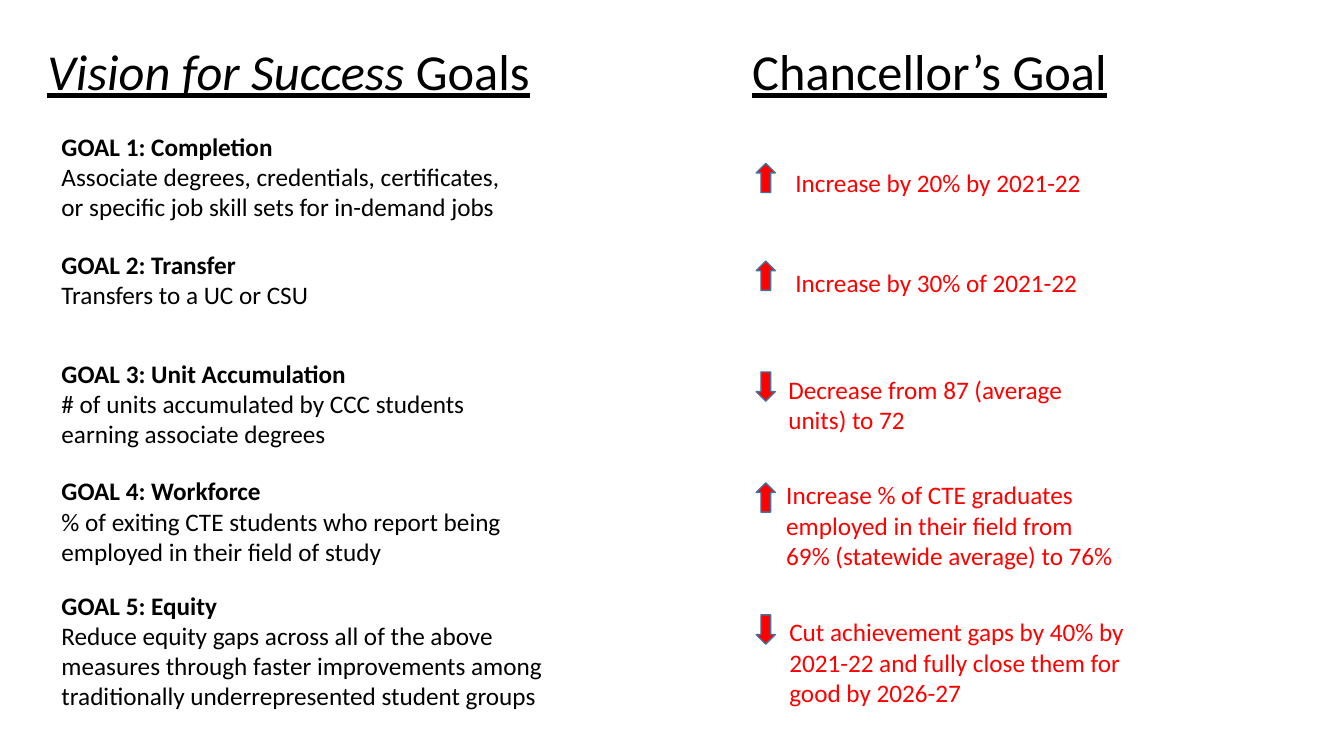
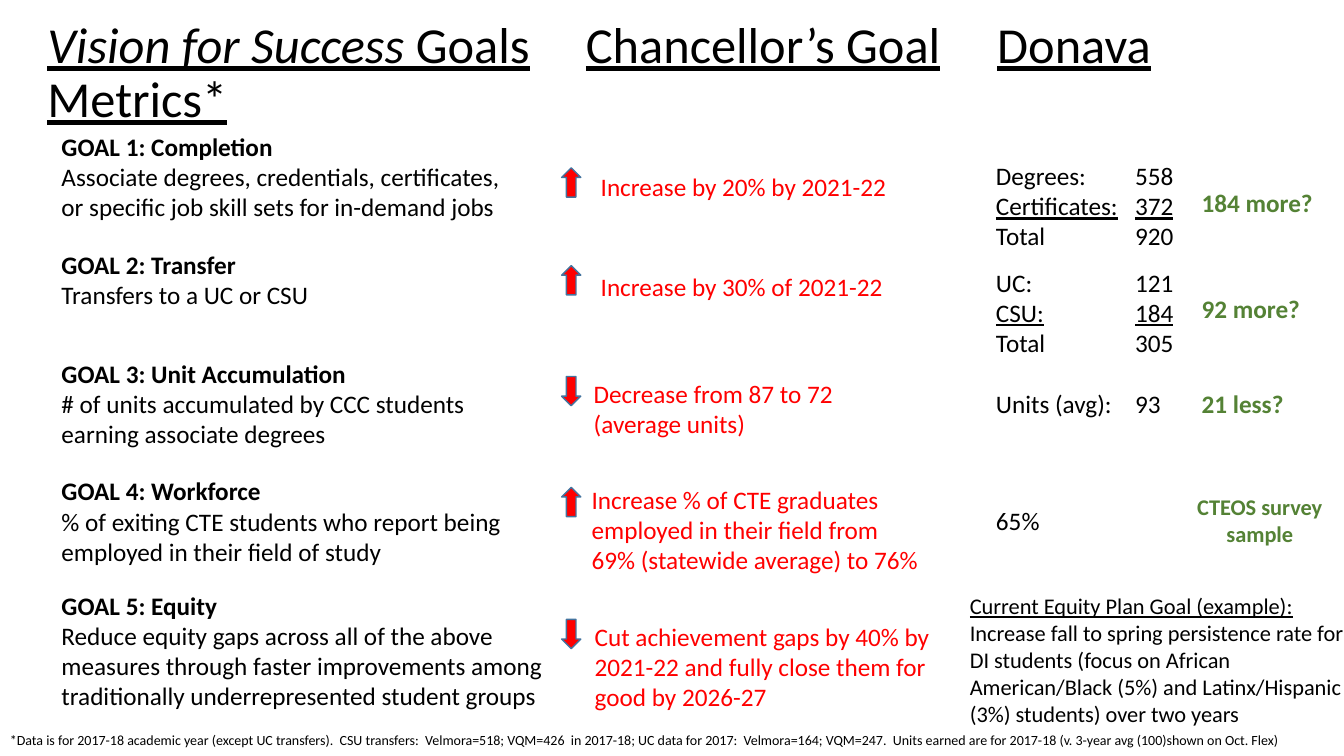
from pptx import Presentation
from pptx import util as u
from pptx.dml.color import RGBColor
from pptx.enum import shapes, text
from pptx.oxml.ns import qn
from lxml import etree

# Shared style: the grid has ten columns and ten rows to the inch
CELL = 0.1
FONT = "Calibri"
BLACK, RED, GREEN, EDGE = "000000", "FF0000", "548235", "43739E"
UP, DOWN = shapes.MSO_SHAPE.UP_ARROW, shapes.MSO_SHAPE.DOWN_ARROW

# Heading, detail and space before (points) of each goal
GOALS = [
    ("GOAL 1: Completion",
     "Associate degrees, credentials, certificates,\vor specific job skill sets for in-demand jobs", 0),
    ("GOAL 2: Transfer", "Transfers to a UC or CSU", 19.7),
    ("GOAL 3: Unit Accumulation",
     "# of units accumulated by CCC students\vearning associate degrees", 34.5),
    ("GOAL 4: Workforce",
     "% of exiting CTE students who report being\vemployed in their field of study", 19.1),
    ("GOAL 5: Equity",
     "Reduce equity gaps across all of the above measures through faster "
     "improvements among traditionally underrepresented student groups", 16.9),
]

# Arrow, arrow row, text row, text indent and text width of each target
TARGETS = [
    (UP, 16.2, 16.1, 2.9, 32, "Increase by 20% by 2021-22"),
    (UP, 25.9, 26, 2.9, 32, "Increase by 30% of 2021-22"),
    (DOWN, 36.9, 36.6, 2.2, 30.9, None),
    (UP, 47.9, 47.1, 2, 34.6,
     "Increase % of CTE graduates employed in their field from 69% (statewide average) to 76%"),
    (DOWN, 61, 60.7, 2.3, 35.9,
     "Cut achievement gaps by 40% by 2021-22 and fully close them for good by 2026-27"),
]

# Row, then label and value pairs; the line above a total is underlined
COUNTS = [
    (15.4, [("Degrees:", "558"), ("Certificates:", "372"), ("Total", "920")]),
    (26, [("UC:", "121"), ("CSU:", "184"), ("Total", "305")]),
    (38, [("Units (avg):", "93")]),
    (49.6, [("65%", "")]),
]
GAPS = [(18.1, "184 more?"), (28.6, "92 more?"), (38, "21 less?")]


def color(code):
    return RGBColor.from_string(code)


def grid(cells):
    return u.Inches(round(cells * CELL, 3))


class Deck:
    def __init__(self):
        self.prs = Presentation()
        self.prs.slide_width, self.prs.slide_height = u.Inches(13.33), u.Inches(7.5)
        self.slide = None

    def page(self):
        self.slide = self.prs.slides.add_slide(self.prs.slide_layouts[1])

    def place(self, shape, left, top, width, height):
        shape.left, shape.top = grid(left), grid(top)
        shape.width, shape.height = grid(width), grid(height)

    def style(self, para, size=18, code=BLACK, bold=False, line=False):
        font = para.font
        font.name, font.size, font.bold, font.underline = FONT, u.Pt(size), bold, line
        font.color.rgb = color(code)

    def tabs(self, para, stops):
        props = para._p.get_or_add_pPr()
        stop_list = etree.SubElement(props, qn("a:tabLst"))
        for stop in stops:
            etree.SubElement(stop_list, qn("a:tab"), pos=str(grid(stop)), algn="l")

    def title(self, stops, heads):
        """Put underlined column heads at tab stops in the title."""
        shape = self.slide.shapes.title
        self.place(shape, 3.7, 0.1, 129.2, 14.5)
        frame = shape.text_frame
        frame.auto_size = text.MSO_AUTO_SIZE.NONE
        frame.vertical_anchor = text.MSO_ANCHOR.MIDDLE
        para = frame.paragraphs[0]
        para.alignment, para.line_spacing = text.PP_ALIGN.LEFT, 0.9
        self.tabs(para, stops)
        self.style(para, 36)
        for words, slant in [("Vision for Success ", True), ("Goals", False)]:
            run = para.add_run()
            run.text, run.font.italic, run.font.underline = words, slant, True
        for head in heads:
            para.add_run().text = "\t"
            run = para.add_run()
            run.text, run.font.underline = head, True

    def goals(self):
        """List the goals in the body placeholder."""
        shape = self.slide.placeholders[1]
        self.place(shape, 5.1, 12.5, 50.4, 59)
        frame = shape.text_frame
        frame.auto_size = text.MSO_AUTO_SIZE.NONE
        frame.vertical_anchor = text.MSO_ANCHOR.TOP
        lines = [(words, space, bold) for head, detail, gap in GOALS
                 for words, space, bold in [(head, gap, True), (detail, 0, False)]]
        for i, (words, space, bold) in enumerate(lines):
            para = frame.add_paragraph() if i else frame.paragraphs[0]
            para.text, para.line_spacing = words, 1.0
            para.space_before, para.space_after = u.Pt(space), u.Pt(0)
            props = para._p.get_or_add_pPr()
            props.set("marL", "0")
            props.set("indent", "0")
            etree.SubElement(props, qn("a:buNone"))
            self.style(para, bold=bold)

    def box(self, left, top, width, height, lines, **look):
        """Add a text box and return its paragraphs."""
        shape = self.slide.shapes.add_textbox(
            grid(left), grid(top), grid(width), grid(height))
        frame = shape.text_frame
        frame.word_wrap = True
        for i, words in enumerate(lines):
            para = frame.add_paragraph() if i else frame.paragraphs[0]
            para.text = words
            self.style(para, **look)
        return frame.paragraphs

    def arrow(self, kind, left, top):
        shape = self.slide.shapes.add_shape(
            kind, grid(left), grid(top), grid(1.9), grid(2.9))
        shape.shadow.inherit = False
        shape.fill.solid()
        shape.fill.fore_color.rgb = color(RED)
        shape.line.color.rgb = color(EDGE)
        shape.line.width = u.Pt(1)

    def targets(self, left, drop, units):
        for kind, row, top, indent, width, words in TARGETS:
            self.arrow(kind, left, row + drop)
            self.box(left + indent, top + drop, width, 7, [words or units], code=RED)

    def counts(self, left, top, pairs):
        """Line up labels and values, underlining the row above a total."""
        paras = self.box(left, top, 22.5, 3.1 * len(pairs) + 1, [""] * len(pairs))
        for i, (para, (label, value)) in enumerate(zip(paras, pairs)):
            self.tabs(para, [13.8])
            for words in (label, "\t", value) if value else (label,):
                run = para.add_run()
                run.text = words
                run.font.underline = i == 1 and words != "\t"


def main():
    deck = Deck()

    # Goals and targets
    deck.page()
    deck.title([69.9], ["Chancellor’s Goal"])
    deck.goals()
    deck.targets(75, 0, "Decrease from 87 (average units) to 72")

    # Goals, targets and college metrics
    deck.page()
    deck.title([53.4, 94.2], ["Chancellor’s Goal", "Donava Metrics*"])
    deck.goals()
    deck.targets(55.7, 0.45, "Decrease from 87 to 72 (average units)")
    for top, pairs in COUNTS:
        deck.counts(97.8, top, pairs)
    for top, words in GAPS:
        deck.box(118.2, top, 14, 4, [words], code=GREEN, bold=True)
    for para in deck.box(117.4, 48.4, 15.1, 6.4, ["CTEOS survey", "sample"],
                         size=16, code=GREEN, bold=True):
        para.alignment = text.PP_ALIGN.CENTER

    # Equity plan and footnote
    plan = deck.box(95.2, 58.3, 40.9, 14.5, [
        "Current Equity Plan Goal (example):",
        "Increase fall to spring persistence rate for DI students (focus on African "
        "American/Black (5%) and Latinx/Hispanic (3%) students) over two years"], size=16)
    plan[0].font.underline = True
    deck.box(0, 72.1, 131.4, 2.7, [
        "*Data is for 2017-18 academic year (except UC transfers).  CSU transfers:  "
        "Velmora=518; VQM=426  in 2017-18; UC data for 2017:  Velmora=164; VQM=247.  "
        "Units earned are for 2017-18 (v. 3-year avg (100)shown on Oct. Flex)"], size=10)

    deck.prs.save("out.pptx")


if __name__ == "__main__":
    main()
